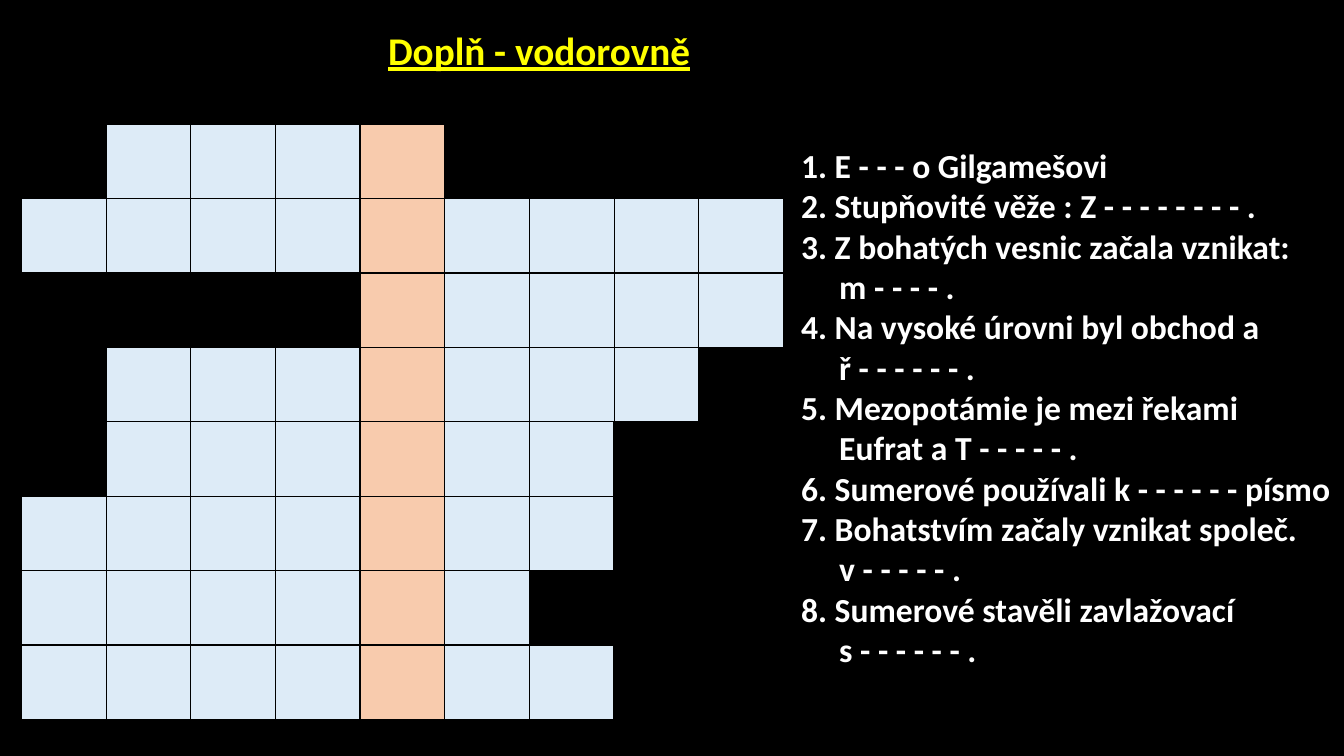
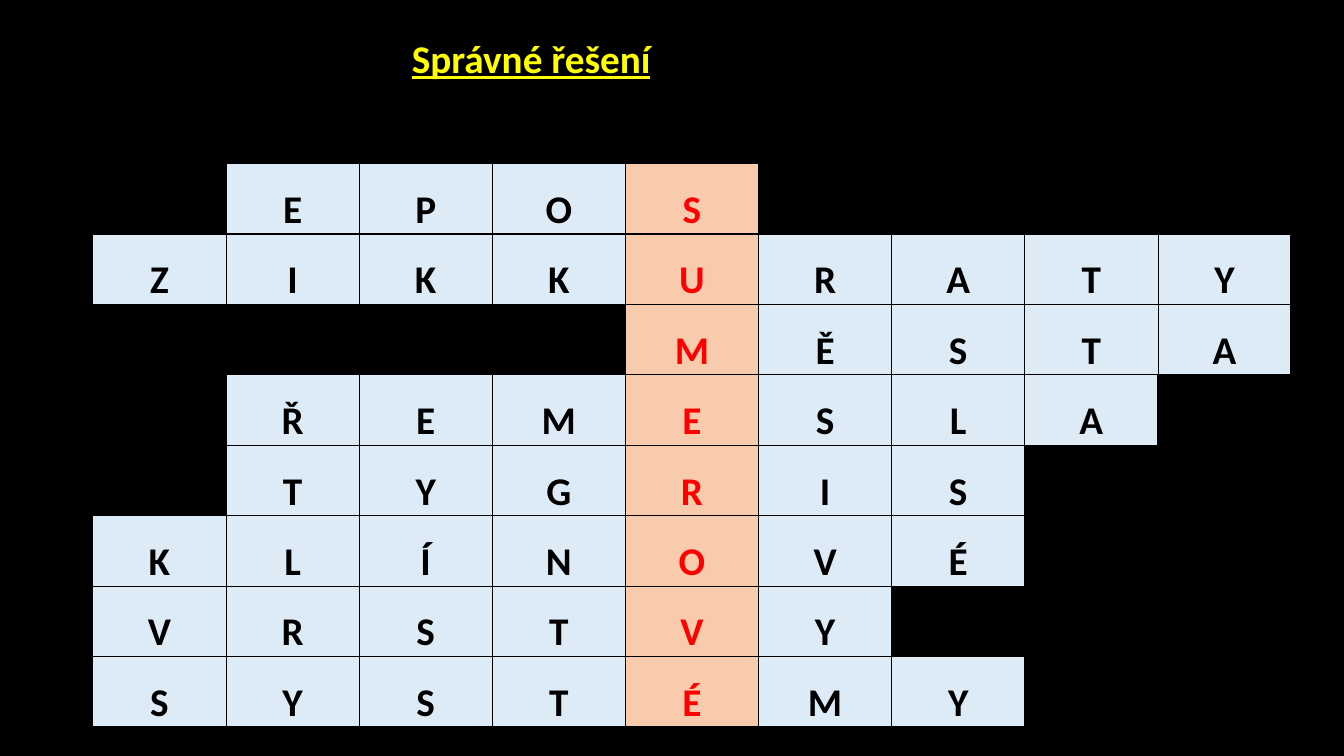
from dataclasses import dataclass

from lxml.etree import SubElement
from pptx import Presentation
from pptx.dml.color import RGBColor
from pptx.enum.text import MSO_ANCHOR, PP_ALIGN
from pptx.oxml.ns import qn
from pptx.util import Cm, Pt


@dataclass(frozen=True)
class Theme:
    font: str = "Calibri"
    background: str = "000000"
    border: str = "000000"
    title: str = "FFFF00"
    clue: str = "FFFFFF"
    letter: str = "000000"
    answer: str = "FF0000"
    word_fill: str = "DDEBF7"
    answer_fill: str = "F8CBAD"
    title_size: int = 28
    clue_size: int = 24
    letter_size: int = 28
    thin: float = 0.5
    thick: float = 1


COLUMNS = 9
ANSWER_COLUMN = 4

WORDS = [
    (1, "EPOS"),
    (0, "ZIKKURATY"),
    (4, "MĚSTA"),
    (1, "ŘEMESLA"),
    (1, "TYGRIS"),
    (0, "KLÍNOVÉ"),
    (0, "VRSTVY"),
    (0, "SYSTÉMY"),
]

CLUES = [
    "1. E - - - o Gilgamešovi",
    "2. Stupňovité věže : Z - - - - - - - - .",
    "3. Z bohatých vesnic začala vznikat:\vm - - - - .",
    "4. Na vysoké úrovni byl obchod a\vř - - - - - - .",
    "5. Mezopotámie je mezi řekami\vEufrat a T - - - - - .",
    "6. Sumerové používali k - - - - - - písmo",
    "7. Bohatstvím začaly vznikat společ.\vv - - - - - .",
    "8. Sumerové stavěli zavlažovací\vs - - - - - - .",
]


class Crossword:
    def __init__(self, theme):
        self.theme = theme
        self.deck = Presentation()
        self.deck.slide_width = Cm(33.87)
        self.deck.slide_height = Cm(19.05)
        self.slide = None

    def new_slide(self):
        self.slide = self.deck.slides.add_slide(self.deck.slide_layouts[6])
        backdrop = self.slide.background.fill
        backdrop.solid()
        backdrop.fore_color.rgb = RGBColor.from_string(self.theme.background)

    def style(self, paragraph, size, color, underline=None):
        for run in paragraph.runs:
            run.font.name = self.theme.font
            run.font.size = Pt(size)
            run.font.bold = True
            run.font.underline = underline
            run.font.color.rgb = RGBColor.from_string(color)

    def frame(self, left, top, width, height):
        box = self.slide.shapes.add_textbox(Cm(left), Cm(top), Cm(width), Cm(height))
        box.text_frame.word_wrap = True
        return box.text_frame

    def title(self, wording, left, top, width):
        heading = self.frame(left, top, width, 1.45)
        heading.text = wording
        self.style(heading.paragraphs[0], self.theme.title_size, self.theme.title, True)

    def clues(self, clues, left, top, width, height):
        listing = self.frame(left, top, width, height)
        for number, clue in enumerate(clues):
            paragraph = listing.add_paragraph() if number else listing.paragraphs[0]
            paragraph.text = clue
            properties = paragraph._p.get_or_add_pPr()
            properties.set("marL", str(Cm(0.96)))
            properties.set("indent", str(-Cm(0.96)))
            self.style(paragraph, self.theme.clue_size, self.theme.clue)

    def borders(self, cell, left, right):
        properties = cell._tc.get_or_add_tcPr()
        weights = {"L": left, "R": right, "T": self.theme.thick, "B": self.theme.thick}
        for side, weight in weights.items():
            line = SubElement(properties, qn(f"a:ln{side}"), w=str(Pt(weight)))
            paint = SubElement(line, qn("a:solidFill"))
            SubElement(paint, qn("a:srgbClr"), val=self.theme.border)

    def letter(self, cell, character, color):
        cell.vertical_anchor = MSO_ANCHOR.BOTTOM
        cell.margin_left = cell.margin_right = cell.margin_top = Cm(0.03)
        cell.margin_bottom = 0
        paragraph = cell.text_frame.paragraphs[0]
        paragraph.text = character
        paragraph.alignment = PP_ALIGN.CENTER
        self.style(paragraph, self.theme.letter_size, color)

    def grid(self, words, left, top, width, height, solved=False):
        theme = self.theme
        table = self.slide.shapes.add_table(
            len(words), COLUMNS, Cm(left), Cm(top), Cm(width), Cm(height)
        ).table
        table.first_row = table.horz_banding = False
        for column in table.columns:
            column.width = Cm(width / COLUMNS)
        for row, (start, word) in zip(table.rows, words):
            row.height = Cm(height / len(words))
            edges = {start, start + len(word), ANSWER_COLUMN, ANSWER_COLUMN + 1}
            for position, cell in enumerate(row.cells):
                left_weight, right_weight = (
                    theme.thick if edge in edges else theme.thin
                    for edge in (position, position + 1)
                )
                self.borders(cell, left_weight, right_weight)
                if not start <= position < start + len(word):
                    cell.fill.background()
                    continue
                in_answer = position == ANSWER_COLUMN
                cell.fill.solid()
                cell.fill.fore_color.rgb = RGBColor.from_string(
                    theme.answer_fill if in_answer else theme.word_fill
                )
                if solved:
                    color = theme.answer if in_answer else theme.letter
                    self.letter(cell, word[position - start], color)


def main():
    crossword = Crossword(Theme())

    crossword.new_slide()
    crossword.grid(WORDS, 0.54, 3.13, 19.2, 15)
    crossword.title("Doplň - vodorovně", 9.53, 0.53, 9.4)
    crossword.clues(CLUES, 19.94, 3.53, 13.9, 13.6)

    crossword.new_slide()
    crossword.grid(WORDS, 2.34, 4.12, 30.2, 14.2, solved=True)
    crossword.title("Správné řešení", 10.13, 0.74, 11.2)

    crossword.deck.save("out.pptx")


if __name__ == "__main__":
    main()
